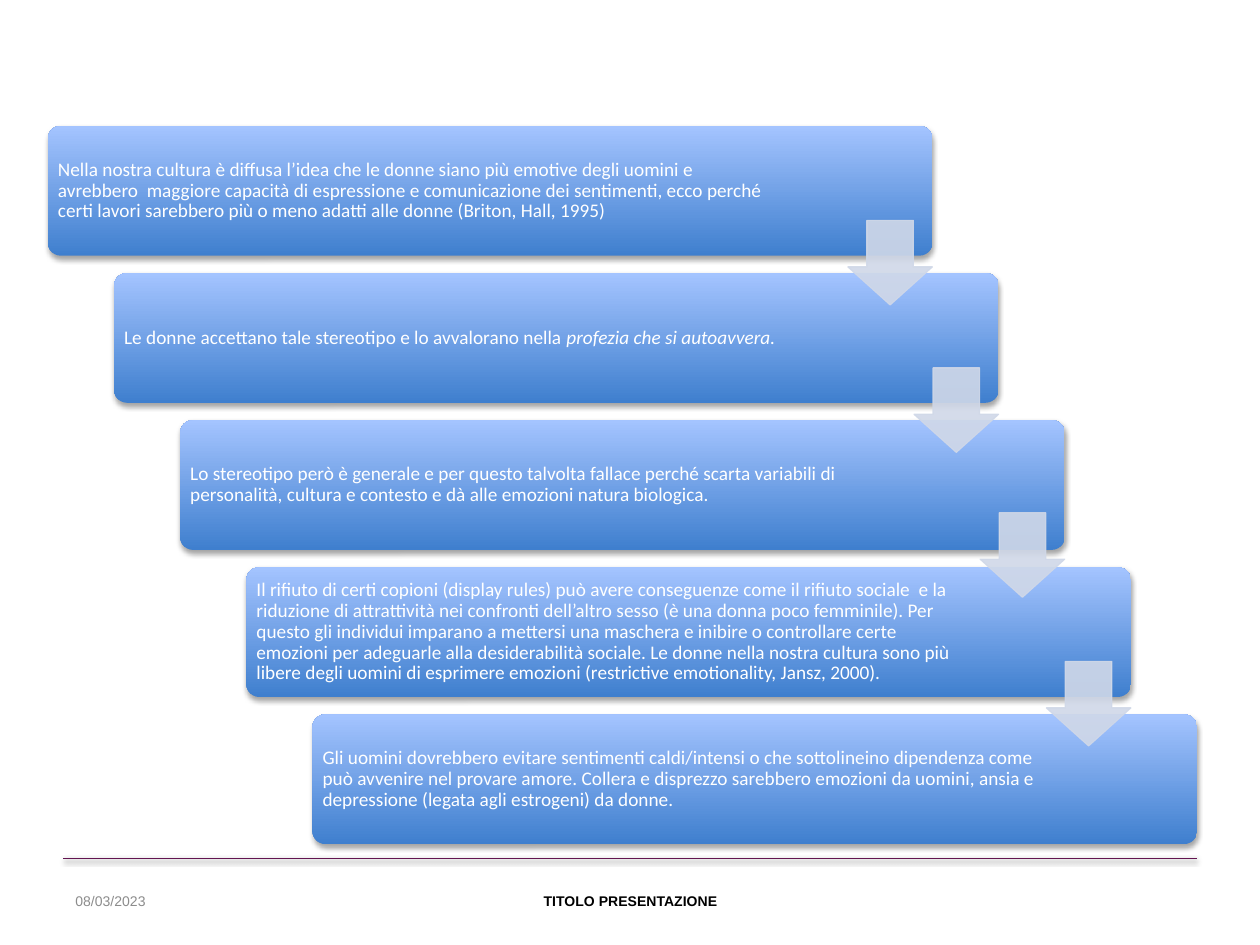
from lxml import etree
from pptx import Presentation
from pptx.dml.color import RGBColor
from pptx.enum import shapes, text
from pptx.oxml import ns
from pptx.util import Inches, Pt

rgb = RGBColor.from_string


def write_text(shape, runs, size=11, font="Calibri", color="FFFFFF", bold=False,
               align=text.PP_ALIGN.LEFT, spacing=1.0, insets=(0.1, 0.05, 0.1, 0.05)):
    """Fill a shape with one paragraph made of (wording, italic) runs."""
    frame = shape.text_frame
    frame.word_wrap = True
    frame.vertical_anchor = text.MSO_ANCHOR.MIDDLE
    (frame.margin_left, frame.margin_top,
     frame.margin_right, frame.margin_bottom) = map(Inches, insets)
    paragraph = frame.paragraphs[0]
    paragraph.alignment = align
    paragraph.line_spacing = spacing
    for wording, italic in runs:
        run = paragraph.add_run()
        run.text = wording
        run.font.name = font
        run.font.size = Pt(size)
        run.font.bold = bold
        run.font.italic = italic
        run.font.color.rgb = rgb(color)


def add_shadow(shape, opacity, distance):
    """Cast a soft black shadow straight down."""
    effects = etree.SubElement(shape._element.spPr, ns.qn("a:effectLst"))
    shadow = etree.SubElement(
        effects, ns.qn("a:outerShdw"), blurRad=str(Pt(3.1)), dist=str(Pt(distance)),
        dir="5400000", rotWithShape="0")
    black = etree.SubElement(shadow, ns.qn("a:srgbClr"), val="000000")
    etree.SubElement(black, ns.qn("a:alpha"), val=str(opacity * 1000))


presentation = Presentation()
presentation.slide_width = Inches(10)
presentation.slide_height = Inches(7.5)
slide = presentation.slides.add_slide(presentation.slide_layouts[6])

# Footer
rule = slide.shapes.add_connector(
    shapes.MSO_CONNECTOR.STRAIGHT, Inches(0.5), Inches(6.81), Inches(9.5), Inches(6.81))
rule.line.color.rgb = rgb("631450")
rule.line.width = Pt(0.5)
add_shadow(rule, opacity=38, distance=1.6)

date = slide.shapes.add_textbox(Inches(0.5), Inches(6.95), Inches(2.33), Inches(0.4))
write_text(date, [("08/03/2023", False)], size=8, font="Arial", color="8C8C8C")
footer = slide.shapes.add_textbox(Inches(3.42), Inches(6.95), Inches(3.17), Inches(0.4))
write_text(footer, [("TITOLO PRESENTAZIONE", False)], size=8, font="Arial",
           color="000000", bold=True, align=text.PP_ALIGN.CENTER)

# Staircase of cards
steps = [
    [("Nella nostra cultura è diffusa l’idea che le donne siano più emotive degli uomini e "
      "avrebbero  maggiore capacità di espressione e comunicazione dei sentimenti, ecco "
      "perché certi lavori sarebbero più o meno adatti alle donne (Briton, Hall, 1995)", False)],
    [("Le donne accettano tale stereotipo e lo avvalorano nella ", False),
     ("profezia che si autoavvera.", True)],
    [("Lo stereotipo però è generale e per questo talvolta fallace perché scarta variabili "
      "di personalità, cultura e contesto e dà alle emozioni natura biologica.", False)],
    [("Il rifiuto di certi copioni (display rules) può avere conseguenze come il rifiuto "
      "sociale  e la riduzione di attrattività nei confronti dell’altro sesso (è una donna "
      "poco femminile). Per questo gli individui imparano a mettersi una maschera e inibire "
      "o controllare certe emozioni per adeguarle alla desiderabilità sociale. Le donne "
      "nella nostra cultura sono più libere degli uomini di esprimere emozioni (restrictive "
      "emotionality, Jansz, 2000).", False)],
    [("Gli uomini dovrebbero evitare sentimenti caldi/intensi o che sottolineino dipendenza "
      "come può avvenire nel provare amore. Collera e disprezzo sarebbero emozioni da "
      "uomini, ansia e depressione (legata agli estrogeni) da donne.", False)],
]
step_x = (2.48 - 0.38) / 4
step_y = (5.67 - 1) / 4

for index, runs in enumerate(steps):
    card = slide.shapes.add_shape(
        shapes.MSO_SHAPE.ROUNDED_RECTANGLE, Inches(0.38 + index * step_x),
        Inches(1 + index * step_y), Inches(7.02), Inches(1.03))
    card.adjustments[0] = 0.1
    card.fill.gradient()
    card.fill.gradient_angle = 90
    for stop, color in zip(card.fill.gradient_stops, ("3F7FCE", "A4C4FF")):
        stop.color.rgb = rgb(color)
    card.line.fill.background()
    add_shadow(card, opacity=35, distance=1.8)
    right_inset = 1.21 if index == 0 else 1.24
    write_text(card, runs, spacing=0.9, insets=(0.05, 0.05, right_inset, 0.05))

# Arrows from each card to the next
for index, top in enumerate((1.75, 2.92, 4.07, 5.25)):
    arrow = slide.shapes.add_shape(
        shapes.MSO_SHAPE.DOWN_ARROW, Inches(6.73 + index * step_x), Inches(top),
        Inches(0.67), Inches(0.67))
    arrow.adjustments[0] = 0.55
    arrow.adjustments[1] = 0.45
    arrow.fill.solid()
    arrow.fill.fore_color.rgb = rgb("D0D8E8")
    arrow.line.color.rgb = rgb("D0D8E8")
    arrow.line.width = Pt(0.75)
    arrow.shadow.inherit = False
    for color in arrow._element.spPr.iter(ns.qn("a:srgbClr")):
        etree.SubElement(color, ns.qn("a:alpha"), val="90000")

presentation.save("out.pptx")
